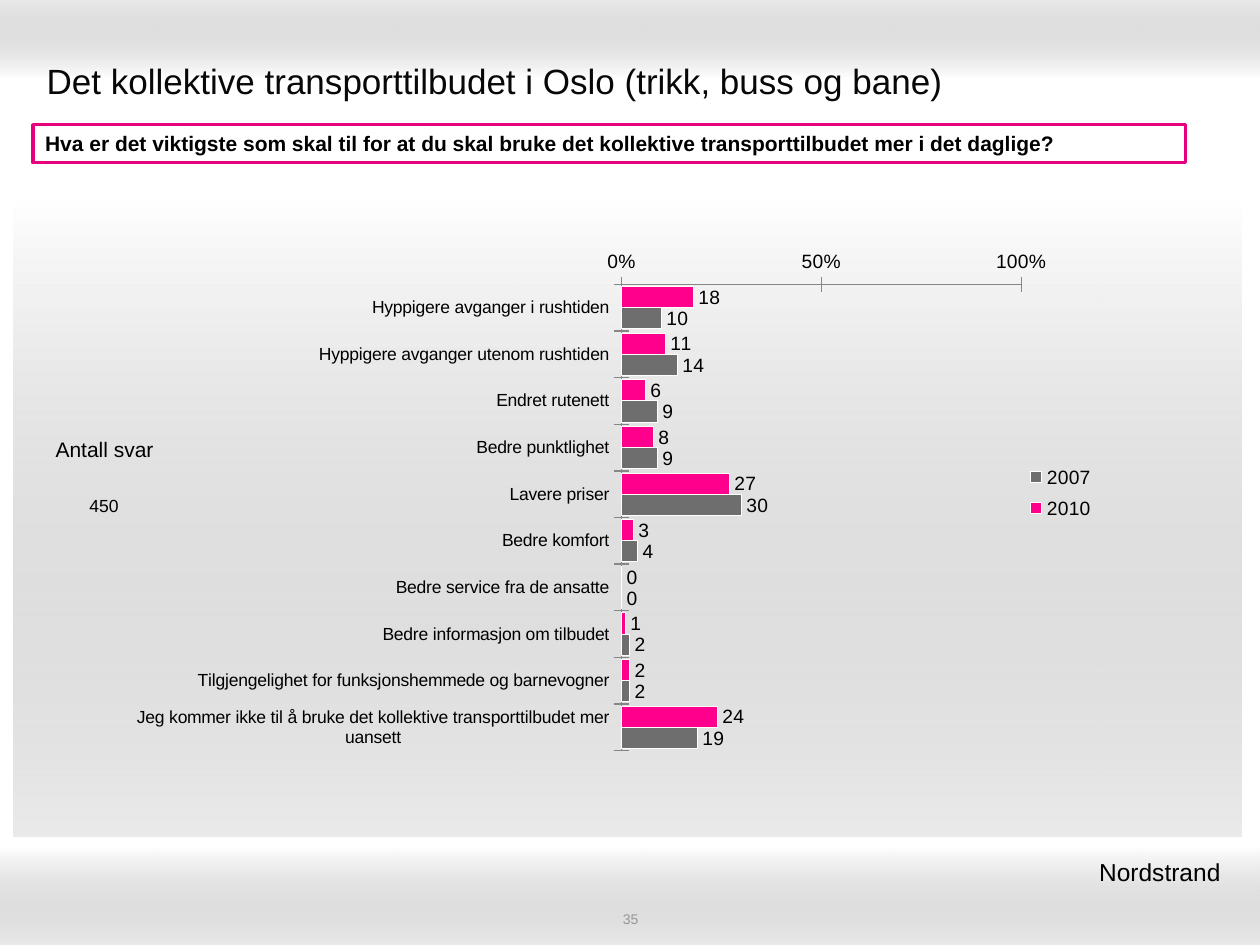
from lxml import etree
from pptx import Presentation
from pptx import util as u
from pptx.chart.data import CategoryChartData
from pptx.dml.color import RGBColor
from pptx.enum import chart as ch, shapes, text
from pptx.oxml import parse_xml
from pptx.oxml.ns import nsdecls, qn

TITLE = "Det kollektive transporttilbudet i Oslo (trikk, buss og bane)"
QUESTION = ("Hva er det viktigste som skal til for at du skal bruke "
            "det kollektive transporttilbudet mer i det daglige?")
DISTRICT = "Nordstrand "
PAGE_NUMBER = "35"
ANSWERS = [
    ("Hyppigere avganger i rushtiden", 18, 10),
    ("Hyppigere avganger utenom rushtiden", 11, 14),
    ("Endret rutenett", 6, 9),
    ("Bedre punktlighet", 8, 9),
    ("Lavere priser", 27, 30),
    ("Bedre komfort", 3, 4),
    ("Bedre service fra de ansatte", 0, 0),
    ("Bedre informasjon om tilbudet", 1, 2),
    ("Tilgjengelighet for funksjonshemmede og barnevogner", 2, 2),
    ("Jeg kommer ikke til å bruke det kollektive transporttilbudet mer uansett", 24, 19),
]
SERIES = [("2010", "FF008C"), ("2007", "6E6E6E")]
BANDS = [((0, 0, 10, 0.62), 90), ((0, 6.72, 10, 0.78), 270), ((0.11, 1.56, 9.74, 5.08), 270)]
TABLES = [
    ("450", (0.52, 3.74, 0.52, 0.56), 10, text.PP_ALIGN.RIGHT),
    ("Antall svar", (0.12, 3.28, 1.42, 0.59), 12, text.PP_ALIGN.CENTER),
]


def color(value):
    return RGBColor.from_string(value)


def inches(place):
    return [u.Inches(length) for length in place]


def style_font(font, size, value="000000", bold=False):
    font.name, font.size, font.bold = "Arial", u.Pt(size), bold
    font.color.rgb = color(value)


def write(frame, words, size, align, value="000000", bold=False,
          anchor=text.MSO_ANCHOR.MIDDLE):
    frame.text = words
    frame.word_wrap = True
    frame.vertical_anchor = anchor
    para = frame.paragraphs[0]
    para.alignment = align
    style_font(para.runs[0].font, size, value, bold)


def add_band(page, place, angle):
    band = page.shapes.add_shape(shapes.MSO_SHAPE.RECTANGLE, *inches(place))
    band.shadow.inherit = False
    band.line.fill.background()
    band.fill.gradient()
    band.fill.gradient_angle = angle
    for stop, value in zip(band.fill.gradient_stops, ("FFFFFF", "999999")):
        stop.color.rgb = color(value)
    gray = band._element.xpath(".//a:gs/a:srgbClr")[1]
    etree.SubElement(gray, qn("a:alpha")).set("val", "20000")


def set_layout(parent, x, y, w, h, inner=False):
    target = '<c:layoutTarget val="inner"/>' if inner else ""
    modes = '<c:xMode val="edge"/><c:yMode val="edge"/>'
    sizes = "".join(f'<c:{tag} val="{size}"/>' for tag, size in zip("xywh", (x, y, w, h)))
    layout = parse_xml(f'<c:layout {nsdecls("c")}><c:manualLayout>{target}{modes}{sizes}'
                       "</c:manualLayout></c:layout>")
    for old in parent.findall(qn("c:layout")):
        parent.remove(old)
    legend_position = parent.find(qn("c:legendPos"))
    if legend_position is None:
        parent.insert(0, layout)
    else:
        legend_position.addnext(layout)


def add_answer_chart(page):
    data = CategoryChartData(number_format="0")
    data.categories = [answer[0] for answer in ANSWERS]
    for column, (name, _) in enumerate(SERIES, 1):
        data.add_series(name, [answer[column] for answer in ANSWERS])
    chart = page.shapes.add_chart(ch.XL_CHART_TYPE.BAR_CLUSTERED,
                                  *inches((0.75, 1.55, 8.03, 4.72)), data).chart
    style_font(chart.font, 11)
    chart.has_title = False
    chart.has_legend = True
    chart.legend.position = ch.XL_LEGEND_POSITION.RIGHT
    chart.legend.include_in_layout = False
    set_layout(chart.legend._element, 0.92, 0.44, 0.07, 0.12)
    set_layout(chart._chartSpace.chart.plotArea, 0.521, 0.15, 0.395, 0.784, inner=True)

    plot = chart.plots[0]
    plot.gap_width, plot.overlap, plot.vary_by_categories = 20, 0, False
    for series, (_, value) in zip(plot.series, SERIES):
        series.format.fill.solid()
        series.format.fill.fore_color.rgb = color(value)
        series.format.line.color.rgb = color("FFFFFF")
        labels = series.data_labels
        labels.show_value = True
        labels.number_format, labels.number_format_is_linked = "0", False
        labels.position = ch.XL_LABEL_POSITION.OUTSIDE_END
        style_font(labels.font, 11)

    for axis, size in ((chart.category_axis, 10), (chart.value_axis, 11)):
        axis.has_major_gridlines = False
        axis.major_tick_mark = ch.XL_TICK_MARK.CROSS
        axis.format.line.color.rgb = color("868686")
        style_font(axis.tick_labels.font, size)
    chart.category_axis.reverse_order = True
    scale = chart.value_axis
    scale.minimum_scale, scale.maximum_scale, scale.major_unit = 0, 100, 50
    scale.tick_labels.number_format = "General\\%"
    scale.tick_labels.number_format_is_linked = False


def add_single_cell(page, words, place, size, align):
    table = page.shapes.add_table(1, 1, *inches(place)).table
    table.first_row = table.horz_banding = False
    style = table._tbl.tblPr.find(qn("a:tableStyleId"))
    style.text = "{2D5ABB26-0587-4C30-8999-92F81FD0307C}"
    cell = table.cell(0, 0)
    cell.fill.background()
    write(cell.text_frame, words, size, align)
    cell.vertical_anchor = text.MSO_ANCHOR.MIDDLE


def main():
    """Build the survey slide on public transport in Oslo."""
    deck = Presentation()
    deck.slide_width, deck.slide_height = u.Inches(10), u.Inches(7.5)
    page = deck.slides.add_slide(deck.slide_layouts[5])
    for place, angle in BANDS:
        add_band(page, place, angle)

    title = page.shapes.title
    title.left, title.top, title.width, title.height = inches((0.27, 0.36, 9.45, 0.55))
    write(title.text_frame, TITLE, 20, text.PP_ALIGN.LEFT, "080808")
    page.shapes._spTree.append(title._element)

    number = page.shapes.add_textbox(*inches((3.42, 7.22, 3.17, 0.14)))
    write(number.text_frame, PAGE_NUMBER, 8, text.PP_ALIGN.CENTER, "969696")
    district = page.shapes.add_textbox(*inches((6.1, 6.75, 3.74, 0.34)))
    write(district.text_frame, DISTRICT, 14, text.PP_ALIGN.RIGHT,
          anchor=text.MSO_ANCHOR.TOP)

    add_answer_chart(page)

    box = page.shapes.add_shape(shapes.MSO_SHAPE.RECTANGLE, *inches((0.26, 0.99, 9.15, 0.3)))
    box.shadow.inherit = False
    box.fill.solid()
    box.fill.fore_color.rgb = color("FFFFFF")
    box.line.color.rgb = color("E7007E")
    box.line.width = u.Pt(2)
    write(box.text_frame, QUESTION, 12, text.PP_ALIGN.LEFT, bold=True,
          anchor=text.MSO_ANCHOR.TOP)

    for table in TABLES:
        add_single_cell(page, *table)
    deck.save("out.pptx")


if __name__ == "__main__":
    main()
